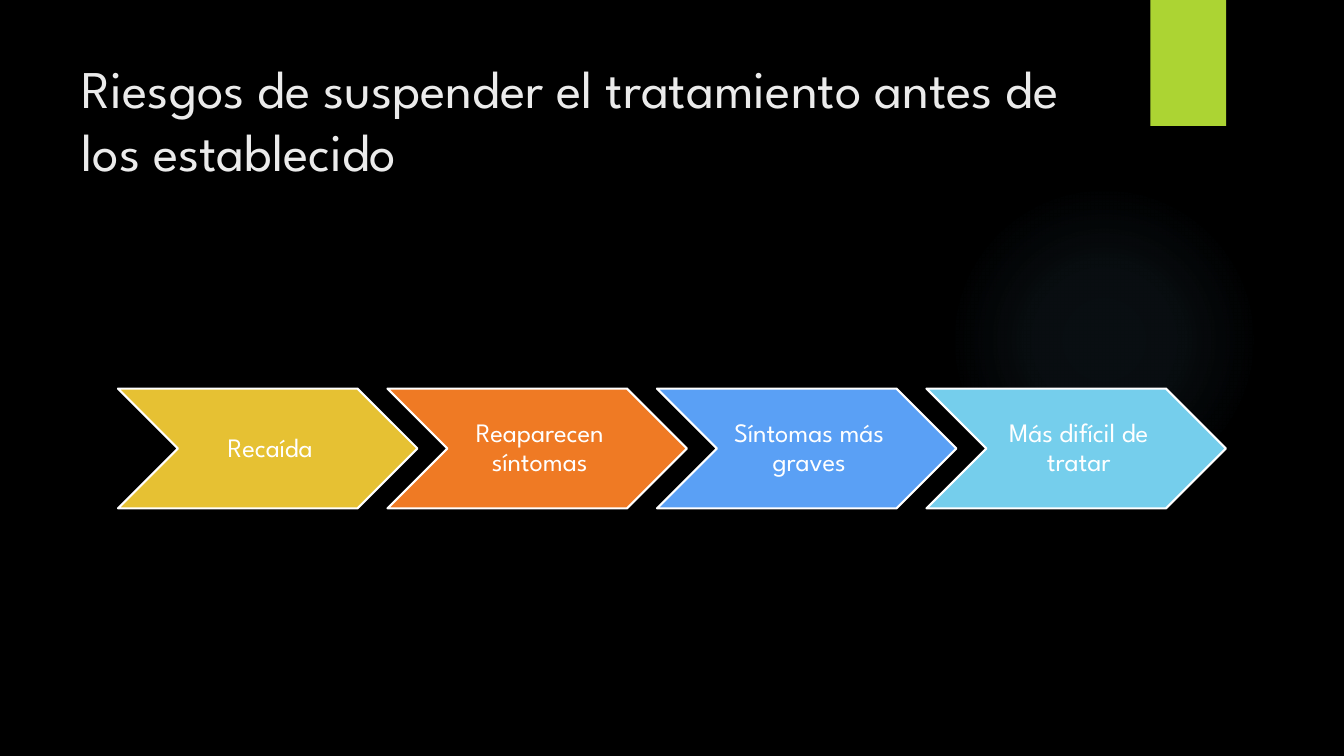
from dataclasses import dataclass

from lxml import etree
from pptx import Presentation
from pptx.dml.color import RGBColor
from pptx.enum.shapes import MSO_SHAPE
from pptx.enum.text import MSO_ANCHOR, PP_ALIGN
from pptx.oxml import parse_xml
from pptx.util import Inches, Pt

CHEVRON, ELLIPSE, RECTANGLE = MSO_SHAPE.CHEVRON, MSO_SHAPE.OVAL, MSO_SHAPE.RECTANGLE
TOP, MIDDLE = MSO_ANCHOR.TOP, MSO_ANCHOR.MIDDLE
LEFT, CENTER = PP_ALIGN.LEFT, PP_ALIGN.CENTER
DRAWING_NS = "http://schemas.openxmlformats.org/drawingml/2006/main"
TITLE_ONLY = 5


@dataclass(frozen=True)
class Theme:
    font: str = "League Spartan"
    background: str = "000000"
    title: str = "EBEBEB"
    label: str = "FFFFFF"
    outline: str = "FFFFFF"
    tab: str = "ACD433"
    glow: str = "7AC4F0"
    steps: tuple = ("E6C133", "EF7A24", "5AA0F5", "75CEEC")
    title_size: float = 37.8
    label_size: float = 19
    outline_width: float = 1.5


class SlideBuilder:
    """Places elements by percentages of the slide's width and height."""

    def __init__(self, deck, theme):
        self.deck, self.theme = deck, theme
        self.slide = deck.slides.add_slide(deck.slide_layouts[TITLE_ONLY])
        backdrop = self.slide.background.fill
        backdrop.solid()
        backdrop.fore_color.rgb = RGBColor.from_string(theme.background)

    def box(self, left, top, width, height):
        across, down = self.deck.slide_width / 100, self.deck.slide_height / 100
        return [round(v) for v in (left * across, top * down, width * across, height * down)]

    def add_text(self, frame, text, size, color, align, anchor):
        frame.word_wrap = True
        frame.vertical_anchor = anchor
        paragraph = frame.paragraphs[0]
        paragraph.alignment = align
        run = paragraph.add_run()
        run.text = text
        run.font.name = self.theme.font
        run.font.size = Pt(size)
        run.font.color.rgb = RGBColor.from_string(color)
        return paragraph

    def title(self, text, *area):
        heading = self.slide.shapes.title
        heading.left, heading.top, heading.width, heading.height = self.box(*area)
        self.add_text(heading.text_frame, text, self.theme.title_size, self.theme.title, LEFT, TOP)

    def shape(self, kind, color, *area):
        figure = self.slide.shapes.add_shape(kind, *self.box(*area))
        figure.shadow.inherit = False
        figure.fill.solid()
        figure.fill.fore_color.rgb = RGBColor.from_string(color)
        figure.line.fill.background()
        return figure

    def glow(self, stops, *area):
        halo = self.shape(ELLIPSE, self.theme.glow, *area)
        stop_xml = "".join(
            f'<a:gs pos="{position * 1000}"><a:srgbClr val="{self.theme.glow}">'
            f'<a:alpha val="{opacity * 1000}"/></a:srgbClr></a:gs>'
            for position, opacity in stops)
        gradient = parse_xml(
            f'<a:gradFill xmlns:a="{DRAWING_NS}" rotWithShape="1"><a:gsLst>{stop_xml}</a:gsLst>'
            '<a:path path="circle"><a:fillToRect l="50000" t="50000" r="50000" b="50000"/>'
            '</a:path></a:gradFill>')
        properties = halo.element.spPr
        solid = properties.find(etree.QName(DRAWING_NS, "solidFill"))
        properties.replace(solid, gradient)

    def step(self, text, color, *area):
        chevron = self.shape(CHEVRON, color, *area)
        chevron.line.color.rgb = RGBColor.from_string(self.theme.outline)
        chevron.line.width = Pt(self.theme.outline_width)
        frame = chevron.text_frame
        frame.margin_left = Inches(0.08)
        frame.margin_top = frame.margin_right = frame.margin_bottom = Inches(0.03)
        label = self.add_text(frame, text, self.theme.label_size, self.theme.label, CENTER, MIDDLE)
        label.line_spacing = 0.9


def main():
    deck = Presentation()
    deck.slide_width, deck.slide_height = Inches(13.33), Inches(7.5)
    theme = Theme()
    page = SlideBuilder(deck, theme)

    # Backdrop: soft glow and green tab
    page.glow([(0, 7), (36, 6), (69, 0)], 70.58, 24.4, 23.1, 41.07)
    page.shape(RECTANGLE, theme.tab, 85.6, 0, 5.63, 16.67)

    # Title
    page.title("Riesgos de suspender el tratamiento antes de los establecido",
               5.33, 6.67, 77.18, 20.4)

    # Chain of risks: each chevron overlaps the next by a tenth of its width
    risks = ["Recaída", "Reaparecen síntomas", "Síntomas más graves", "Más difícil de tratar"]
    first_left, top, width, height = 8.78, 51.4, 22.28, 15.84
    for index, (risk, color) in enumerate(zip(risks, theme.steps)):
        page.step(risk, color, first_left + index * width * 0.9, top, width, height)

    deck.save("out.pptx")


if __name__ == "__main__":
    main()
